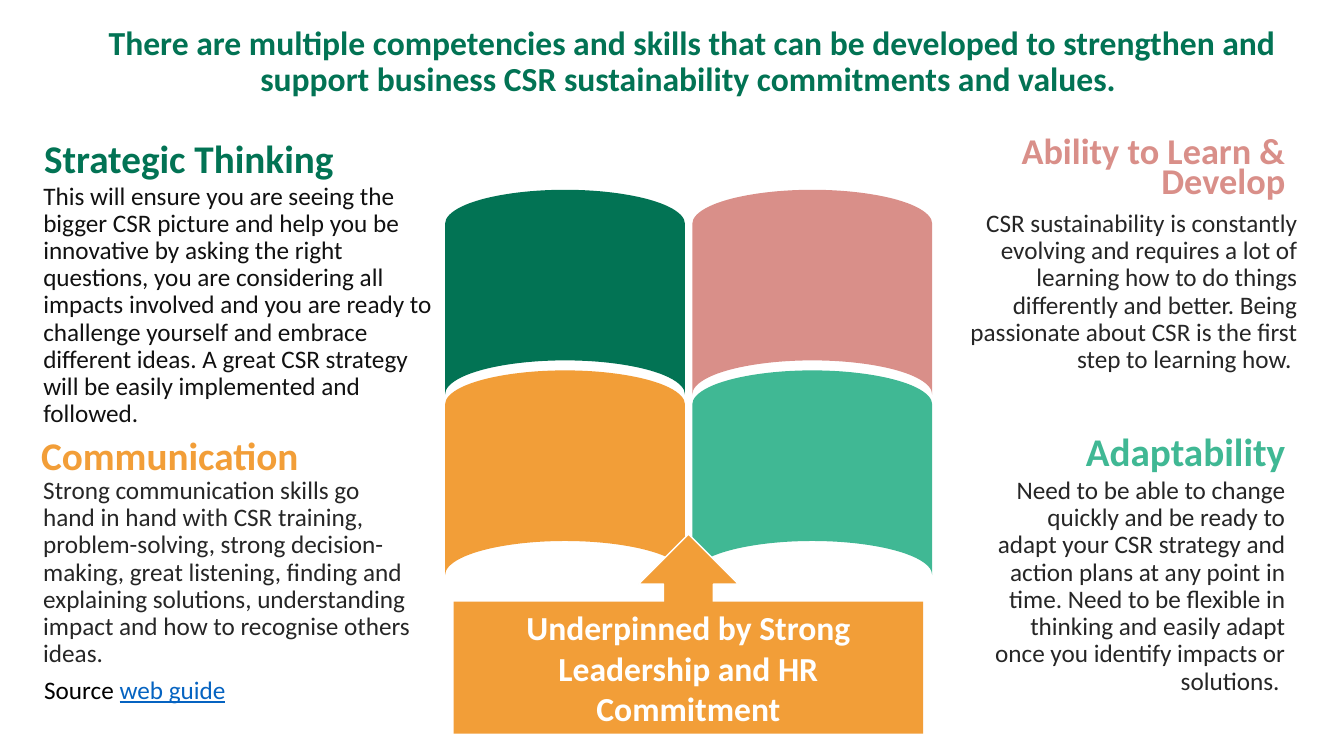
from pptx import Presentation
from pptx.dml.color import RGBColor
from pptx.enum.shapes import MSO_SHAPE
from pptx.enum.text import MSO_ANCHOR, MSO_AUTO_SIZE, PP_ALIGN
from pptx.util import Pt

COLOURS = {
    "green": "027354", "rose": "D98F89", "orange": "F29E38", "mint": "40B894",
    "black": "000000", "ink": "111111", "grey": "262626", "link": "0563C1", "white": "FFFFFF",
}
LEFT, RIGHT, CENTRE = PP_ALIGN.LEFT, PP_ALIGN.RIGHT, PP_ALIGN.CENTER


def write(holder, text, size, colour, bold=False, align=LEFT, spacing=0.9, anchor=MSO_ANCHOR.TOP):
    frame = holder.text_frame
    frame_format = {"word_wrap": True, "auto_size": MSO_AUTO_SIZE.NONE, "vertical_anchor": anchor}
    for name, value in frame_format.items():
        setattr(frame, name, value)
    paragraph = frame.paragraphs[0]
    paragraph.alignment = align
    paragraph.line_spacing = spacing
    run = paragraph.add_run()
    run.text = text
    font_format = {"name": "Calibri", "size": Pt(size), "bold": bold}
    for name, value in font_format.items():
        setattr(run.font, name, value)
    run.font.color.rgb = RGBColor.from_string(COLOURS[colour])
    return paragraph


def add_filled(preset, left, top, width, height, colour, rotation=0):
    shape = slide.shapes.add_shape(preset, Pt(left), Pt(top), Pt(width), Pt(height))
    shape.rotation = rotation
    shape.shadow.inherit = False
    shape.fill.solid()
    shape.fill.fore_color.rgb = RGBColor.from_string(COLOURS[colour])
    shape.line.fill.background()
    return shape


deck = Presentation()
deck.slide_width, deck.slide_height = Pt(960), Pt(540)
slide = deck.slides.add_slide(deck.slide_layouts[5])

# Title
title = slide.shapes.title
title_place = {"left": 0, "top": 15, "width": 960, "height": 60}
for side, length in title_place.items():
    setattr(title, side, Pt(length))
headline = write(
    title,
    "There are multiple competencies and skills that can be developed to strengthen and "
    "support business CSR sustainability commitments and values. ",
    24, "green", bold=True, align=CENTRE)
headline._p.get_or_add_pPr().set("marL", str(Pt(28.8)))

# Four curved panels
for index, colour in enumerate(["green", "rose", "orange", "mint"]):
    row, column = divmod(index, 2)
    add_filled(MSO_SHAPE.FLOWCHART_STORED_DATA, 330.5 + 176.6 * column, 123 + 129 * row,
               146.2, 171.4, colour, rotation=90)

# Competencies: heading and description, each with left, top, width
competencies = [
    ("Strategic Thinking", (24.5, 96.5, 280), 28, "green", LEFT, 0.9,
     "This will ensure you are seeing the bigger CSR picture and help you be innovative by "
     "asking the right questions, you are considering all impacts involved and you are ready to "
     "challenge yourself and embrace different ideas. A great CSR strategy will be easily "
     "implemented and followed.", (23.8, 127.4, 298.8), "ink"),
    ("Communication", (22.3, 308.2, 211.7), 28, "orange", LEFT, 0.9,
     "Strong communication skills go hand in hand with CSR training, problem-solving, strong "
     "decision-making, great listening, finding and explaining solutions, understanding impact "
     "and how to recognise others ideas.", (23.8, 337.7, 280.8), "grey"),
    ("Ability to Learn & Develop", (684, 96.5, 241.2), 25.9, "rose", RIGHT, 0.7,
     "CSR sustainability is constantly evolving and requires a lot of learning how to do things "
     "differently and better. Being passionate about CSR is the first step to learning how. ",
     (684, 146.9, 249.8), "grey"),
    ("Adaptability", (713.5, 305.3, 211.7), 28, "mint", RIGHT, 0.9,
     "Need to be able to change quickly and be ready to adapt your CSR strategy and action plans "
     "at any point in time. Need to be flexible in thinking and easily adapt once you identify "
     "impacts or solutions. ", (701.3, 337.7, 223.9), "grey"),
]
for heading, heading_place, size, colour, align, spacing, description, place, ink in competencies:
    for text, (left, top, width), text_size, text_colour, bold, leading in [
            (heading, heading_place, size, colour, True, spacing),
            (description, place, 18, ink, False, 0.9)]:
        box = slide.shapes.add_textbox(Pt(left), Pt(top), Pt(width), Pt(55.4))
        write(box, text, text_size, text_colour, bold, align, leading)

# Source line
source = slide.shapes.add_textbox(Pt(24.5), Pt(478), Pt(237.6), Pt(29.5))
write(source, "Source ", 18, "black", spacing=1.0)
write(source, "web guide", 18, "link", spacing=1.0).runs[-1].font.underline = True

# Foundation: upward arrow and its label
arrow = add_filled(MSO_SHAPE.RIGHT_ARROW_CALLOUT, 420.5, 285.1, 142.6, 335.5, "orange", rotation=270)
arrow.line.color.rgb = RGBColor.from_string(COLOURS["white"])
arrow.line.width = Pt(1)
foundation = add_filled(MSO_SHAPE.RECTANGLE, 324, 429.8, 335.5, 94.3, "orange")
write(foundation, "Underpinned by Strong Leadership and HR Commitment", 24, "white",
      bold=True, align=CENTRE, spacing=1.0, anchor=MSO_ANCHOR.MIDDLE)

deck.save("out.pptx")
